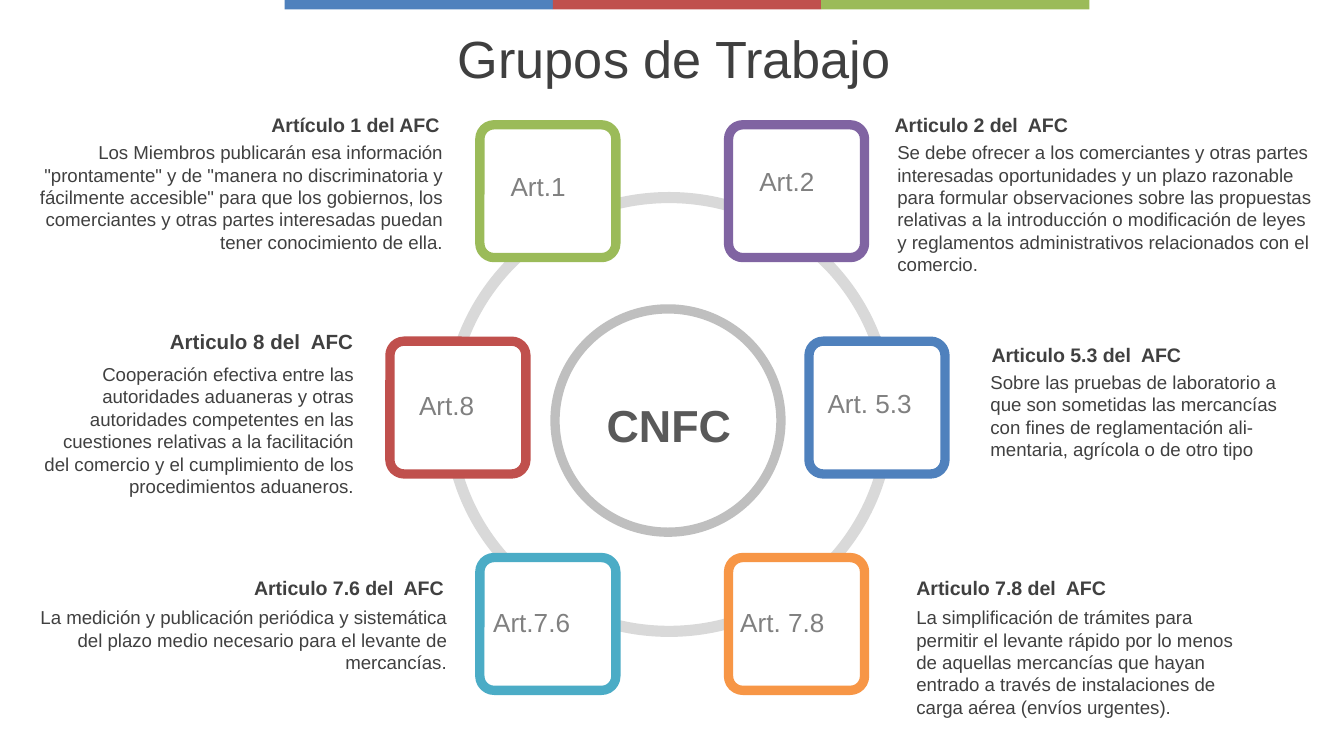
from collections import namedtuple

from pptx import Presentation
from pptx.dml.color import RGBColor
from pptx.enum.shapes import MSO_SHAPE as Shape
from pptx.enum.text import MSO_ANCHOR as Anchor, PP_ALIGN as Align
from pptx.util import Cm, Pt

COLOURS = {
    "blue": "4F81BD", "red": "C0504D", "green": "9BBB59",
    "purple": "8064A2", "teal": "4BACC6", "orange": "F79646",
    "white": "FFFFFF", "ring": "D9D9D9", "hub": "BFBFBF",
    "hub_text": "595959", "label": "808080", "body": "404040", "title": "3F3F3F",
}
FONT = "Arial"
TILE_WIDTH, TILE_HEIGHT = 2.57, 2.51
ROWS = [2.36 + 4.09 * row for row in range(3)]

Box = namedtuple("Box", "left top width height")
Article = namedtuple("Article", "label colour tile label_shift text heading_shift "
                                "heading heading_size align body")

ARTICLES = [
    Article("Art.1", "green", (9.07, ROWS[0]), (0.33, 0.74),
            Box(0.38, 2.54, 8.23, 2.39), (-0.05, -0.53),
            "Artículo 1 del AFC", 10.5, Align.RIGHT,
            "Los Miembros publicarán esa información \"prontamente\" y de \"manera no "
            "discriminatoria y fácilmente accesible\" para que los gobiernos, los "
            "comerciantes y otras partes interesadas puedan tener conocimiento de ella."),
    Article("Art.2", "purple", (13.77, ROWS[0]), (0.33, 0.64),
            Box(16.71, 2.54, 8.43, 3.25), (-0.05, -0.53),
            "Articulo 2 del  AFC", 10.5, Align.LEFT,
            "Se debe ofrecer a los comerciantes y otras partes interesadas oportunidades "
            "y un plazo razonable para formular observaciones sobre las propuestas "
            "relativas a la introducción o modificación de leyes y reglamentos "
            "administrativos relacionados con el comercio."),
    Article("Art. 5.3", "blue", (15.29, ROWS[1]), (0.1, 0.74),
            Box(18.47, 6.88, 5.99, 2.82), (0.02, -0.53),
            "Articulo 5.3 del  AFC", 10.5, Align.LEFT,
            "Sobre las pruebas de laboratorio a que son sometidas las mercancías con "
            "fines de reglamentación ali-\nmentaria, agrícola o de otro tipo"),
    Article("Art. 7.8", "orange", (13.77, ROWS[2]), (-0.03, 0.79),
            Box(17.07, 11.33, 6.93, 2.39), (0, -0.56),
            "Articulo 7.8 del  AFC", 10.5, Align.LEFT,
            "La simplificación de trámites para permitir el levante rápido por lo menos "
            "de aquellas mercancías que hayan entrado a través de instalaciones de "
            "carga aérea (envíos urgentes)."),
    Article("Art.7.6", "teal", (9.07, ROWS[2]), (0, 0.79),
            Box(0.46, 11.33, 8.23, 1.55), (-0.05, -0.56),
            "Articulo 7.6 del  AFC", 10.5, Align.RIGHT,
            "La medición y publicación periódica y sistemática del plazo medio necesario "
            "para el levante de mercancías."),
    Article("Art.8", "red", (7.37, ROWS[1]), (0.3, 0.79),
            Box(0.43, 6.73, 6.5, 2.82), (0, -0.63),
            "Articulo 8 del  AFC", 11, Align.RIGHT,
            "Cooperación efectiva entre las autoridades aduaneras y otras autoridades "
            "competentes en las cuestiones relativas a la facilitación del comercio y el "
            "cumplimiento de los procedimientos aduaneros."),
]


def colour(name):
    """Return the named colour."""
    return RGBColor.from_string(COLOURS[name])


def write(frame, text, size, tint, align=Align.LEFT, bold=False):
    """Fill a text frame and format its paragraphs."""
    frame.word_wrap = True
    frame.text = text
    for para in frame.paragraphs:
        para.alignment = align
        for span in para.runs:
            span.font.name = FONT
            span.font.size = Pt(size)
            span.font.bold = bold
            span.font.color.rgb = colour(tint)


def add_text(page, box, *style):
    """Add a text box with the given text and style."""
    frame = page.shapes.add_textbox(*map(Cm, box)).text_frame
    write(frame, *style)


def add_figure(page, kind, box, fill, line=None):
    """Add a flat preset shape, outlined when a line colour is given."""
    figure = page.shapes.add_shape(kind, *map(Cm, box))
    figure.shadow.inherit = False
    figure.fill.solid()
    figure.fill.fore_color.rgb = colour(fill)
    if line:
        figure.line.color.rgb = colour(line)
        figure.line.width = Pt(5)
    else:
        figure.line.fill.background()
    return figure


def add_top_band(page, box):
    """Split the box into three equal coloured bars."""
    width = box.width / 3
    for index, name in enumerate(("blue", "red", "green")):
        bar = box._replace(left=box.left + index * width, width=width)
        add_figure(page, Shape.RECTANGLE, bar, name)


def add_title(page, box):
    """Place the title placeholder in the box."""
    title = page.shapes.title
    title.left, title.top, title.width, title.height = map(Cm, box)
    write(title.text_frame, "Grupos de Trabajo", 28, "title", Align.CENTER)
    title.text_frame.vertical_anchor = Anchor.MIDDLE


def add_hub(page, box):
    """Draw the outer ring in the box and the named circle inside it."""
    hub = Box(box.left + 2.11, box.top + 2.21, 4.27, 4.22)
    add_figure(page, Shape.OVAL, hub, "white", "hub")
    name_box = Box(box.left + 2.62, box.top + 3.76, 3.28, 1.27)
    add_text(page, name_box, "CNFC", 24, "hub_text", Align.CENTER, True)
    ring = add_figure(page, Shape.DONUT, box, "ring")
    ring.adjustments[0] = 0.025


def add_article(page, article):
    """Draw an article's tile and label with its heading and description."""
    left, top = article.tile
    tile = add_figure(page, Shape.ROUNDED_RECTANGLE,
                      Box(left, top, TILE_WIDTH, TILE_HEIGHT), "white", article.colour)
    tile.adjustments[0] = 0.107
    shift_x, shift_y = article.label_shift
    add_text(page, Box(left + shift_x, top + shift_y, TILE_WIDTH, 1.02),
             article.label, 14, "label")
    text = article.text
    shift_x, shift_y = article.heading_shift
    add_text(page, Box(text.left + shift_x, text.top + shift_y, text.width, 0.71),
             article.heading, article.heading_size, "body", article.align, True)
    add_text(page, text, article.body, 10, "body", article.align)


def main():
    """Build and save the slide."""
    deck = Presentation()
    deck.slide_width, deck.slide_height = Cm(25.4), Cm(14.29)
    page = deck.slides.add_slide(deck.slide_layouts[5])
    add_top_band(page, Box(5.38, 0, 15.21, 0.18))
    add_title(page, Box(1.02, 0.18, 23.44, 1.83))
    add_hub(page, Box(8.38, 3.63, 8.53, 8.41))
    for article in ARTICLES:
        add_article(page, article)
    deck.save("out.pptx")


if __name__ == "__main__":
    main()
